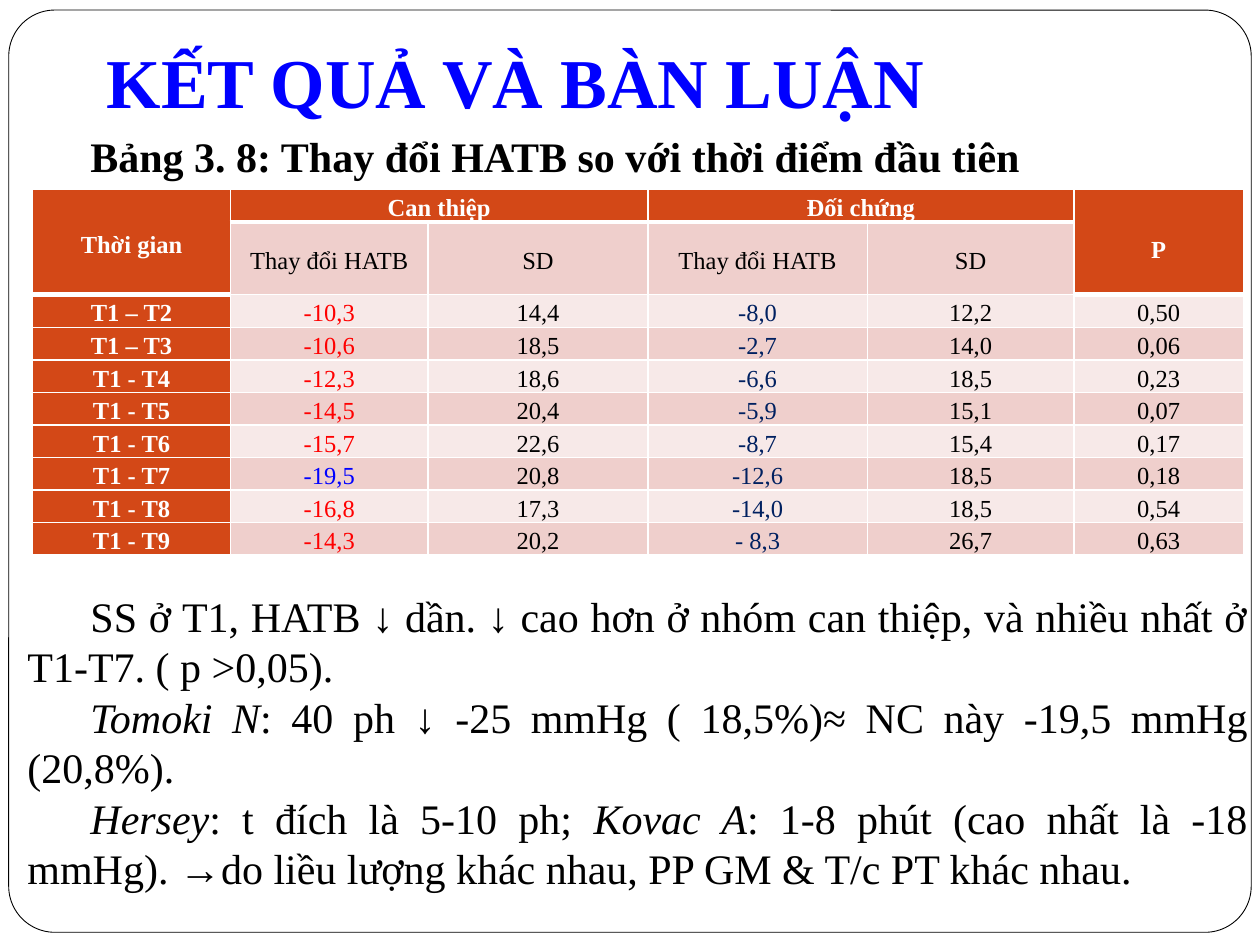
from typing import Any, NamedTuple

import pptx
import pptx.dml.color
import pptx.enum.shapes
import pptx.enum.text
import pptx.oxml
import pptx.oxml.ns
import pptx.util

Pt = pptx.util.Pt
Align = pptx.enum.text.PP_ALIGN
Anchor = pptx.enum.text.MSO_ANCHOR

FONT = "Times New Roman"
HEX = {
    "white": "FFFFFF", "black": "000000", "blue": "0000FF", "red": "FF0000",
    "navy": "002060", "rust": "D34817", "rose": "EFCFCC", "pale": "F7E9E8",
}
WIDTHS = [113, 113, 125.5, 125.5, 118, 97]
HEIGHTS = [18.5, 41.5] + [18.6] * 8
DATA = [
    ["T1 – T2", "-10,3", "14,4", "-8,0", "12,2", "0,50"],
    ["T1 – T3", "-10,6", "18,5", "-2,7", "14,0", "0,06"],
    ["T1 - T4", "-12,3", "18,6", "-6,6", "18,5", "0,23"],
    ["T1 - T5", "-14,5", "20,4", "-5,9", "15,1", "0,07"],
    ["T1 - T6", "-15,7", "22,6", "-8,7", "15,4", "0,17"],
    ["T1 - T7", "-19,5", "20,8", "-12,6", "18,5", "0,18"],
    ["T1 - T8", "-16,8", "17,3", "-14,0", "18,5", "0,54"],
    ["T1 - T9", "-14,3", "20,2", "- 8,3", "26,7", "0,63"],
]
HEAD = [
    ["Thời gian", "Can thiệp", "", "Đối chứng", "", "P"],
    ["", "Thay đổi HATB", "SD", "Thay đổi HATB", "SD", ""],
]
MERGES = [((0, 0), (1, 0)), ((0, 1), (0, 2)), ((0, 3), (0, 4)), ((0, 5), (1, 5))]
INKS = ["white", "red", "black", "navy", "black", "black"]


class Run(NamedTuple):
    text: str
    slant: bool = False


class Box(NamedTuple):
    left: float
    top: float
    width: float
    height: float
    paras: list[list[Run]]
    size: float
    ink: str = "black"
    bold: bool = False
    indent: float = 0
    frame: dict[str, Any] = {}
    para: dict[str, Any] = {}


BOXES = [
    Box(54, 9.5, 630, 67.5, [[Run("KẾT QUẢ VÀ BÀN LUẬN")]], 40, "blue", True,
        frame={"vertical_anchor": Anchor.BOTTOM, "margin_bottom": Pt(7.2)}),
    Box(8.6, 333, 711.4, 181.5, [
        [Run("SS ở T1, HATB ↓ dần. ↓ cao hơn ở nhóm can thiệp, "
             "và nhiều nhất ở T1-T7. ( p >0,05).")],
        [Run("Tomoki N", True),
         Run(": 40 ph ↓ -25 mmHg ( 18,5%)≈ NC này -19,5 mmHg (20,8%).")],
        [Run("Hersey", True), Run(": t đích là 5-10 ph; "), Run("Kovac A", True),
         Run(": 1-8 phút (cao nhất là -18 mmHg). "
             "→do liều lượng khác nhau, PP GM & T/c PT khác nhau.")],
    ], 24, indent=36, frame={"vertical_anchor": Anchor.MIDDLE},
        para={"alignment": Align.JUSTIFY}),
    Box(8.6, 71.3, 692, 36,
        [[Run("Bảng 3. 8: Thay đổi HATB so với thời điểm đầu tiên")]], 24,
        bold=True, indent=36, para={"alignment": Align.JUSTIFY}),
]


def shade(name: str) -> pptx.dml.color.RGBColor:
    return pptx.dml.color.RGBColor.from_string(HEX[name])


def apply(item: Any, values: dict[str, Any]) -> None:
    for name, value in values.items():
        setattr(item, name, value)


def style(run: Any, size: float, ink: str, bold: bool, slant: bool = False) -> None:
    apply(run.font, {"name": FONT, "size": Pt(size), "bold": bold, "italic": slant})
    run.font.color.rgb = shade(ink)


def draw_frame(slide: Any) -> None:
    kind = pptx.enum.shapes.MSO_SHAPE.ROUNDED_RECTANGLE
    shape = slide.shapes.add_shape(kind, Pt(5), Pt(5.75), Pt(710), Pt(527))
    shape.adjustments[0] = 0.05
    shape.shadow.inherit = False
    shape.fill.solid()
    shape.fill.fore_color.rgb = shade("white")
    shape.line.color.rgb = shade("black")
    shape.line.width = Pt(0.5)


def draw_box(slide: Any, box: Box) -> None:
    frame = slide.shapes.add_textbox(*map(Pt, box[:4])).text_frame
    apply(frame, {"word_wrap": True, **box.frame})
    for i, runs in enumerate(box.paras):
        para = frame.add_paragraph() if i else frame.paragraphs[0]
        apply(para, box.para)
        if box.indent:
            para._p.get_or_add_pPr().set("indent", str(Pt(box.indent)))
        for part in runs:
            run = para.add_run()
            run.text = part.text
            style(run, box.size, box.ink, box.bold, part.slant)


def edge(cell: Any, top: float, base: float) -> None:
    """Give the cell white borders; top and base are the widths of those sides."""
    props = cell._tc.get_or_add_tcPr()
    sides = {"L": 1, "R": 1, "T": top, "B": base}
    for i, (side, width) in enumerate(sides.items()):
        props.insert(i, pptx.oxml.parse_xml(
            f'<a:ln{side} {pptx.oxml.ns.nsdecls("a")} w="{Pt(width)}"><a:solidFill>'
            f'<a:srgbClr val="{HEX["white"]}"/></a:solidFill></a:ln{side}>'))


def look(row: int, col: int) -> tuple[str, str, bool]:
    """Return the fill, ink and weight of the cell at this place."""
    if row == 0 or col == 0 or (row == 1 and col == 5):
        return "rust", "white", True
    fill = "rose" if row % 2 else "pale"
    if row == 1:
        return fill, "black", False
    ink = "blue" if (row, col) == (7, 1) else INKS[col]
    return fill, ink, False


def fill_cell(cell: Any, text: str, row: int, col: int) -> None:
    fill, ink, bold = look(row, col)
    apply(cell, {
        "vertical_anchor": Anchor.MIDDLE, "margin_left": Pt(5), "margin_right": Pt(5),
        "margin_top": Pt(6 if (row, col) == (0, 5) else 0), "margin_bottom": Pt(0),
    })
    cell.fill.solid()
    cell.fill.fore_color.rgb = shade(fill)
    last = 1 if col in (0, 5) else 0
    edge(cell, 3 if row == last + 1 else 1, 3 if row <= last else 1)
    para = cell.text_frame.paragraphs[0]
    apply(para, {"alignment": Align.CENTER, "line_spacing": 1.2, "space_before": Pt(5)})
    para.font.size = Pt(14)
    if text:
        run = para.add_run()
        run.text = text
        style(run, 14, ink, bold)


def draw_table(slide: Any) -> None:
    rows = HEAD + DATA
    table = slide.shapes.add_table(
        len(rows), len(WIDTHS), Pt(18.7), Pt(108.3),
        Pt(sum(WIDTHS)), Pt(sum(HEIGHTS))).table
    for col, width in zip(table.columns, WIDTHS):
        col.width = Pt(width)
    for row, height in zip(table.rows, HEIGHTS):
        row.height = Pt(height)
    for first, last in MERGES:
        table.cell(*first).merge(table.cell(*last))
    for r, texts in enumerate(rows):
        for c, text in enumerate(texts):
            fill_cell(table.cell(r, c), text, r, c)


def main() -> None:
    deck = pptx.Presentation()
    apply(deck, {"slide_width": Pt(720), "slide_height": Pt(540)})
    slide = deck.slides.add_slide(deck.slide_layouts[6])
    draw_frame(slide)
    draw_table(slide)
    for box in BOXES:
        draw_box(slide, box)
    deck.save("out.pptx")


if __name__ == "__main__":
    main()
